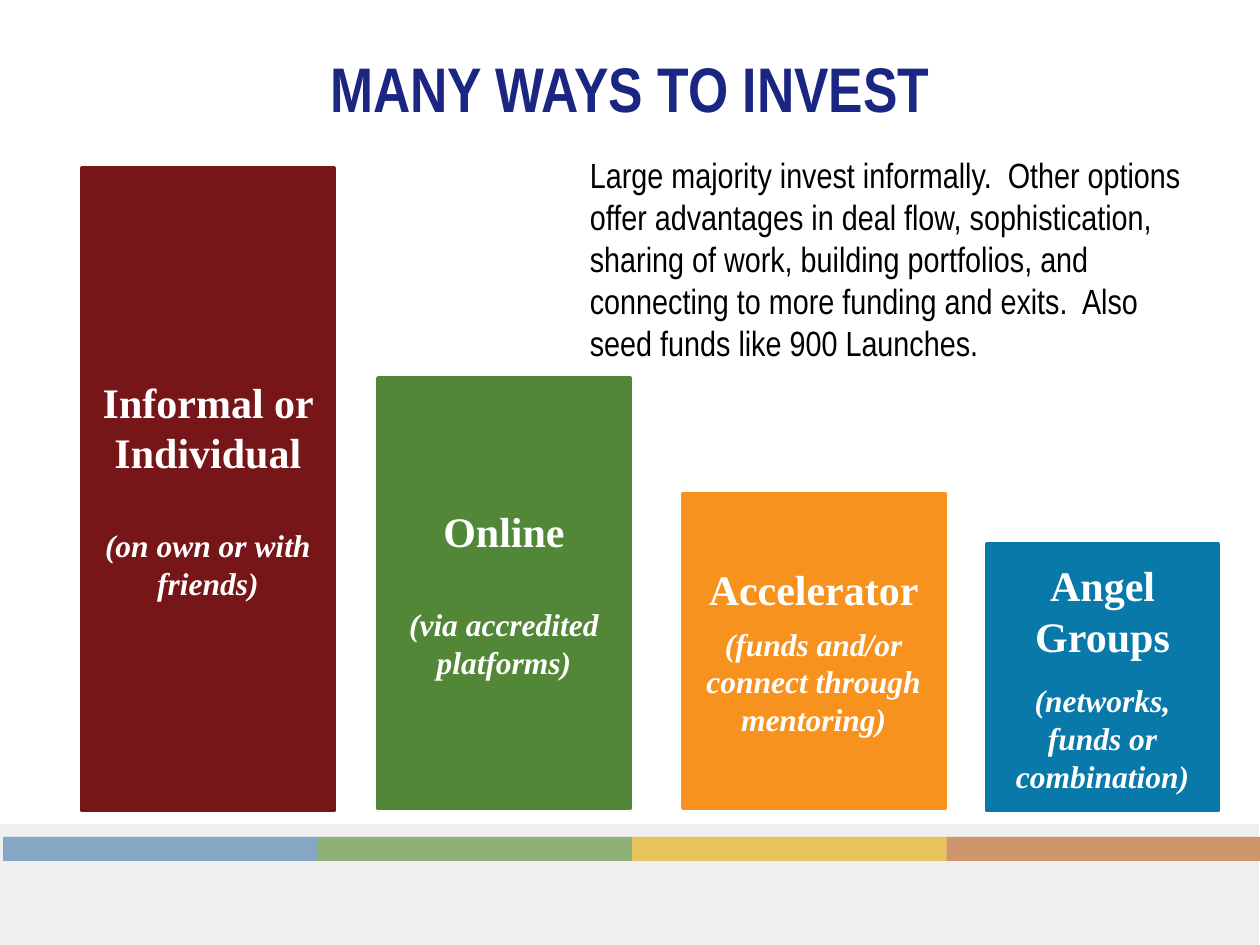
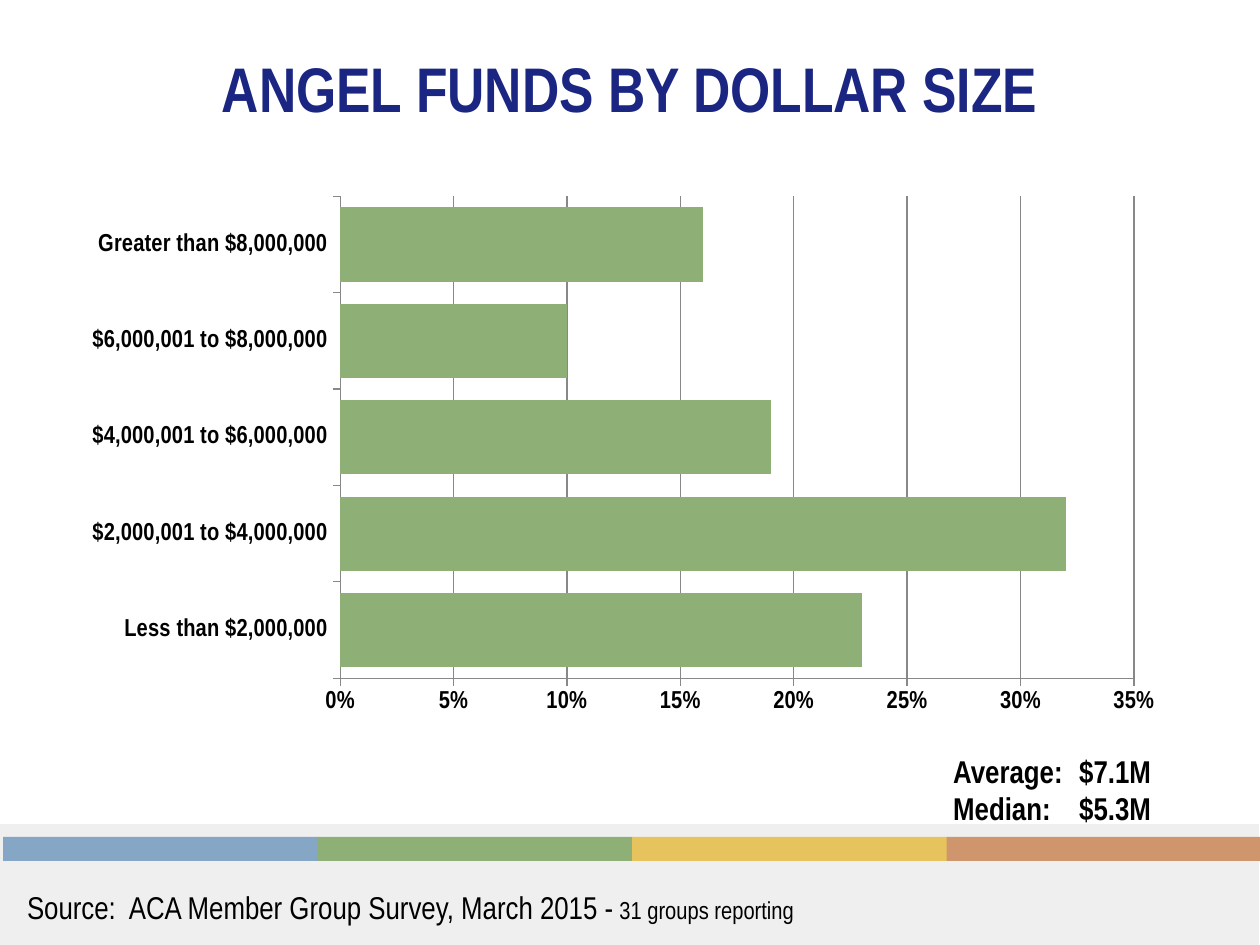
from dataclasses import dataclass

from lxml import etree
from pptx import Presentation
from pptx.chart.data import CategoryChartData
from pptx.dml.color import RGBColor
from pptx.enum.chart import XL_CHART_TYPE, XL_TICK_MARK
from pptx.enum.shapes import MSO_SHAPE
from pptx.enum.text import MSO_ANCHOR, PP_ALIGN
from pptx.oxml.ns import qn
from pptx.util import Inches, Pt

RECT = MSO_SHAPE.RECTANGLE
LEFT, CENTER = PP_ALIGN.LEFT, PP_ALIGN.CENTER
TOP, MIDDLE = MSO_ANCHOR.TOP, MSO_ANCHOR.MIDDLE
BAR = XL_CHART_TYPE.BAR_CLUSTERED
OUTSIDE = XL_TICK_MARK.OUTSIDE
COLUMNS, ROWS = 120, 90


@dataclass(frozen=True)
class Theme:
    """Colours, fonts and type sizes shared by the slides."""

    navy: str = "1A2682"
    black: str = "000000"
    white: str = "FFFFFF"
    axis: str = "888888"
    footer: str = "EFEFEF"
    stripes: tuple = ("86A6C5", "8EB076", "E6C35C", "CF956D")
    sans: str = "Arial Narrow"
    serif: str = "Times New Roman"
    title: int = 36
    heading: int = 24
    body: int = 20
    detail: int = 18
    small: int = 14


def rgb(value):
    """Return a colour from its hexadecimal form."""
    return RGBColor.from_string(value)


class Deck:
    """Hold the style and the current slide, and draw elements on a grid."""

    def __init__(self, prs, theme):
        """Keep the presentation, its theme and the grid unit sizes."""
        self.prs, self.theme = prs, theme
        self.col = prs.slide_width / COLUMNS
        self.row = prs.slide_height / ROWS

    def box(self, x, y, w, h):
        """Turn columns and rows into slide lengths."""
        return (round(x * self.col), round(y * self.row),
                round(w * self.col), round(h * self.row))

    def style(self, font, size, color, name=None, bold=False, italic=False):
        """Set every property of a font."""
        font.name, font.size = name or self.theme.sans, Pt(size)
        font.bold, font.italic = bold, italic
        font.color.rgb = rgb(color)

    def slide(self, title):
        """Start a slide with the shared footer band and title."""
        t = self.theme
        self.s = self.prs.slides.add_slide(self.prs.slide_layouts[6])
        self.rect(-0.1, 78.5, 120, 11.5, t.footer)
        for i, color in enumerate(t.stripes):
            self.rect(0.3 + 29.95 * i, 79.7, 30, 2.3, color)
        self.text(6, 3.6, 108, 9.4, [title], t.title, t.navy, bold=True,
                  align=CENTER, anchor=MIDDLE)

    def rect(self, x, y, w, h, color, line=0):
        """Draw a plain rectangle, outlined in its own colour on request."""
        sp = self.s.shapes.add_shape(RECT, *self.box(x, y, w, h))
        sp.shadow.inherit = False
        sp.fill.solid()
        sp.fill.fore_color.rgb = rgb(color)
        if line:
            sp.line.color.rgb = rgb(color)
            sp.line.width = Pt(line)
        else:
            sp.line.fill.background()
        return sp

    def text(self, x, y, w, h, lines, size, color, bold=False, align=LEFT,
             anchor=TOP, wrap=True):
        """Write one paragraph per line in a text box."""
        tf = self.s.shapes.add_textbox(*self.box(x, y, w, h)).text_frame
        tf.word_wrap, tf.vertical_anchor = wrap, anchor
        tf.text = "\n".join(lines)
        for p in tf.paragraphs:
            p.alignment = align
            for r in p.runs:
                self.style(r.font, size, color, bold=bold)
        return tf

    def pillar(self, x, y, w, h, color, heading, detail, gap):
        """Draw a coloured pillar with a heading and an italic detail."""
        t = self.theme
        tf = self.rect(x, y, w, h, color, line=2).text_frame
        tf.word_wrap, tf.vertical_anchor = True, MIDDLE
        tf.text = f"{heading}\n{detail}"
        head, note = tf.paragraphs
        note.space_before = Pt(gap)
        for p, size in ((head, t.heading), (note, t.detail)):
            p.alignment = CENTER
            self.style(p.runs[0].font, size, t.white, t.serif, True, p is note)

    def bar_chart(self, x, y, w, h, values, plot):
        """Draw a horizontal bar chart of percentages."""
        t = self.theme
        data = CategoryChartData(number_format="0%")
        data.categories = list(values)
        data.add_series("Series 1", list(values.values()))
        chart = self.s.shapes.add_chart(BAR, *self.box(x, y, w, h), data).chart
        chart.has_legend = chart.has_title = False
        self.style(chart.font, t.small, t.black, bold=True)
        bars = chart.plots[0]
        bars.gap_width, bars.vary_by_categories = 30, False
        fill = bars.series[0].format.fill
        fill.solid()
        fill.fore_color.rgb = rgb(t.stripes[1])
        value_axis = chart.value_axis
        value_axis.minimum_scale, value_axis.maximum_scale = 0, 0.35
        value_axis.major_unit = 0.05
        value_axis.tick_labels.number_format = "0%"
        value_axis.tick_labels.number_format_is_linked = False
        value_axis.has_major_gridlines = True
        for axis in (chart.category_axis, value_axis):
            axis.major_tick_mark = OUTSIDE
            self.style(axis.tick_labels.font, t.small, t.black, bold=True)
            self.hairline(axis.format.line)
        self.hairline(value_axis.major_gridlines.format.line)
        self.place_plot(chart, plot)

    def hairline(self, line):
        """Give a chart line the axis colour and width."""
        line.color.rgb, line.width = rgb(self.theme.axis), Pt(0.75)

    def place_plot(self, chart, plot):
        """Fix the inner plot area at shares of the chart's size."""
        area = chart._chartSpace.chart.plotArea
        for old in area.findall(qn("c:layout")):
            area.remove(old)
        layout = etree.Element(qn("c:layout"))
        area.insert(0, layout)
        manual = etree.SubElement(layout, qn("c:manualLayout"))
        parts = [("layoutTarget", "inner"), ("xMode", "edge"),
                 ("yMode", "edge"), *zip("xywh", plot)]
        for tag, value in parts:
            etree.SubElement(manual, qn(f"c:{tag}")).set("val", str(value))


def ways_to_invest(deck):
    """Build the slide that compares four ways to invest."""
    t = deck.theme
    deck.slide("MANY WAYS TO INVEST")
    pillars = [
        (7.8, 16, 24, 61.2, "771619", "Informal or Individual",
         "(on own or with friends)", 28),
        (36, 36, 24, 41, "538738", "Online",
         "(via accredited platforms)", 28),
        (65, 47, 25, 30, "F7921E", "Accelerator",
         "(funds and/or connect through mentoring)", 6),
        (94, 51.8, 22, 25.4, "0879A9", "Angel Groups",
         "(networks, funds or combination)", 12),
    ]
    for pillar in pillars:
        deck.pillar(*pillar)
    deck.text(55, 14, 61, 21.4, [
        "Large majority invest informally.  Other options offer advantages "
        "in deal flow, sophistication, sharing of work, building portfolios, "
        "and connecting to more funding and exits.  Also seed funds like "
        "900 Launches."], t.body, t.black)


def funds_by_size(deck):
    """Build the slide that charts angel funds by dollar size."""
    t = deck.theme
    deck.slide("ANGEL FUNDS BY DOLLAR SIZE")
    tf = deck.text(1.4, 84, 88.3, 4.8,
                   ["Source:  ACA Member Group Survey, March 2015 -"],
                   t.detail, t.black)
    r = tf.paragraphs[0].add_run()
    r.text = " 31 groups reporting"
    deck.style(r.font, t.small, t.black)
    shares = {
        "Less than $2,000,000": 0.23,
        "$2,000,001 to $4,000,000": 0.32,
        "$4,000,001 to $6,000,000": 0.19,
        "$6,000,001 to $8,000,000": 0.1,
        "Greater than $8,000,000": 0.16,
    }
    deck.bar_chart(0, 15.8, 120, 58.1, shares, (0.27, 0.05, 0.63, 0.79))
    deck.text(89.6, 71, 21.5, 8.5, ["Average:\t$7.1M", "Median:\t$5.3M"],
              t.detail, t.black, bold=True, wrap=False)


def main():
    """Build and save the presentation."""
    prs = Presentation()
    prs.slide_width, prs.slide_height = Inches(10), Inches(7.5)
    deck = Deck(prs, Theme())
    ways_to_invest(deck)
    funds_by_size(deck)
    prs.save("out.pptx")


if __name__ == "__main__":
    main()
